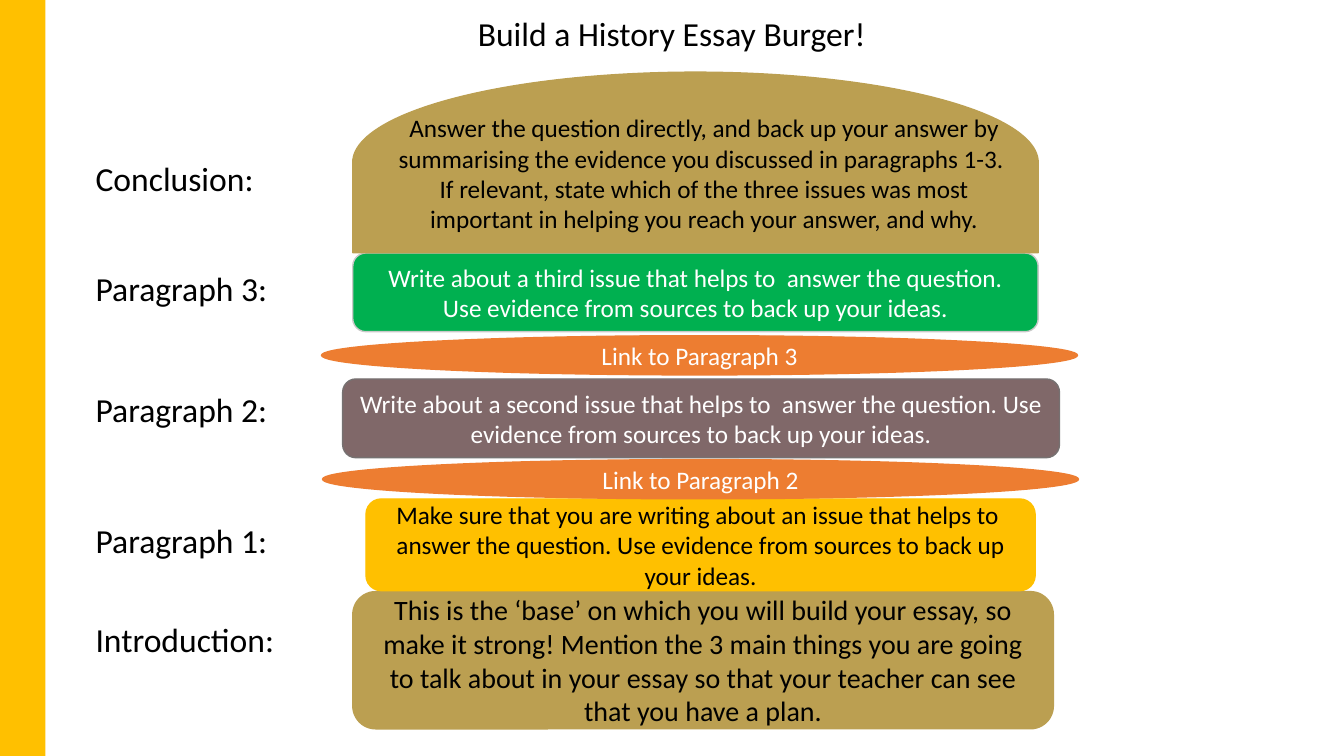
from pptx import Presentation
from pptx.dml.color import RGBColor
from pptx.enum.shapes import MSO_SHAPE as Shape
from pptx.enum.text import MSO_ANCHOR as Anchor, MSO_AUTO_SIZE as AutoSize, PP_ALIGN as Align
from pptx.util import Pt

# Content
FONT = "Calibri"
COLORS = {
    "bun": "BB9F51", "cheese": "FFC000", "lettuce": "00B050", "lettuce edge": "C9C9C9",
    "meat": "806869", "meat edge": "767171", "sauce": "ED7D31",
    "black": "000000", "white": "FFFFFF",
}
TITLE = "Build a History Essay Burger!"
EVIDENCE = "Use evidence from sources to back up your ideas."
CONCLUSION = (
    "Answer the question directly, and back up your answer by summarising the evidence "
    "you discussed in paragraphs 1-3.  If relevant, state which of the three issues was "
    "most important in helping you reach your answer, and why."
)
INTRODUCTION = (
    "This is the ‘base’ on which you will build your essay, so make it strong! Mention "
    "the 3 main things you are going to talk about in your essay so that your teacher "
    "can see that you have a plan."
)
# Text, box (left, top, width, height), fill, edge, text colour, text size
LAYERS = [
    (INTRODUCTION, (252, 422.6, 500.4, 98), "bun", "bun", "black", 20),
    (f"Make sure that you are writing about an issue that helps to  answer the question. {EVIDENCE}",
     (261.4, 356.4, 478, 65.5), "cheese", "cheese", "black", 18),
    (f"Write about a third issue that helps to  answer the question. {EVIDENCE}",
     (252, 180.7, 489.6, 56.2), "lettuce", "lettuce edge", "white", 18),
    (f"Write about a second issue that helps to  answer the question. {EVIDENCE}",
     (244.8, 270.7, 512, 56.2), "meat", "meat edge", "white", 18),
]
LINKS = [
    ("Link to Paragraph 2", (230.4, 328.3, 540, 28)),
    ("Link to Paragraph 3", (229.7, 239.8, 540, 28)),
]
LABELS = [
    ("Conclusion:", 109.4), ("Paragraph 3:", 188), ("Paragraph 2:", 274.3),
    ("Paragraph 1:", 368), ("Introduction:", 438.5),
]
TOP_BUN = (252, 51.5, 489.6, 129)


def color(name):
    return RGBColor.from_string(COLORS[name])


def write(shape, text, size, color_name, align=Align.CENTER, anchor=Anchor.MIDDLE):
    text_frame = shape.text_frame
    text_frame.text = text
    text_frame.word_wrap = True
    text_frame.auto_size = AutoSize.NONE
    text_frame.vertical_anchor = anchor
    paragraph = text_frame.paragraphs[0]
    paragraph.alignment = align
    font = paragraph.runs[0].font
    font.name, font.size = FONT, Pt(size)
    font.color.rgb = color(color_name)


def add_part(kind, box, fill, edge=None):
    shape = slide.shapes.add_shape(kind, *map(Pt, box))
    shape.shadow.inherit = False
    shape.fill.solid()
    shape.fill.fore_color.rgb = color(fill)
    if edge:
        shape.line.color.rgb = color(edge)
        shape.line.width = Pt(1)
    else:
        shape.line.fill.background()
    return shape


def add_text(text, box, size, align):
    text_box = slide.shapes.add_textbox(*map(Pt, box))
    write(text_box, text, size, "black", align, Anchor.TOP)


presentation = Presentation()
presentation.slide_width, presentation.slide_height = Pt(960), Pt(540)
slide = presentation.slides.add_slide(presentation.slide_layouts[5])

# Title
title = slide.shapes.title
title.left, title.top, title.width, title.height = map(Pt, (229.7, 5.8, 500.4, 36.7))
write(title, TITLE, 24, "black", anchor=Anchor.TOP)

# Burger layers
for text, box, fill, edge, text_color, size in LAYERS:
    write(add_part(Shape.ROUNDED_RECTANGLE, box, fill, edge), text, size, text_color)

# Top bun: a delay shape turned upright about its centre
left, top, width, height = TOP_BUN
turned_box = (left + (width - height) / 2, top + (height - width) / 2, height, width)
add_part(Shape.FLOWCHART_DELAY, turned_box, "bun", "bun").rotation = 270

# Links between paragraphs
for text, box in LINKS:
    write(add_part(Shape.OVAL, box, "sauce", "sauce"), text, 18, "white")

# Conclusion text and row labels
add_text(CONCLUSION, (272.2, 77, 461.5, 94.3), 18, Align.CENTER)
for text, top in LABELS:
    add_text(text, (61.2, top, 153.4, 36), 24, Align.LEFT)

# Side band
add_part(Shape.RECTANGLE, (0, 0, 32.4, 540), "cheese")

presentation.save("out.pptx")
